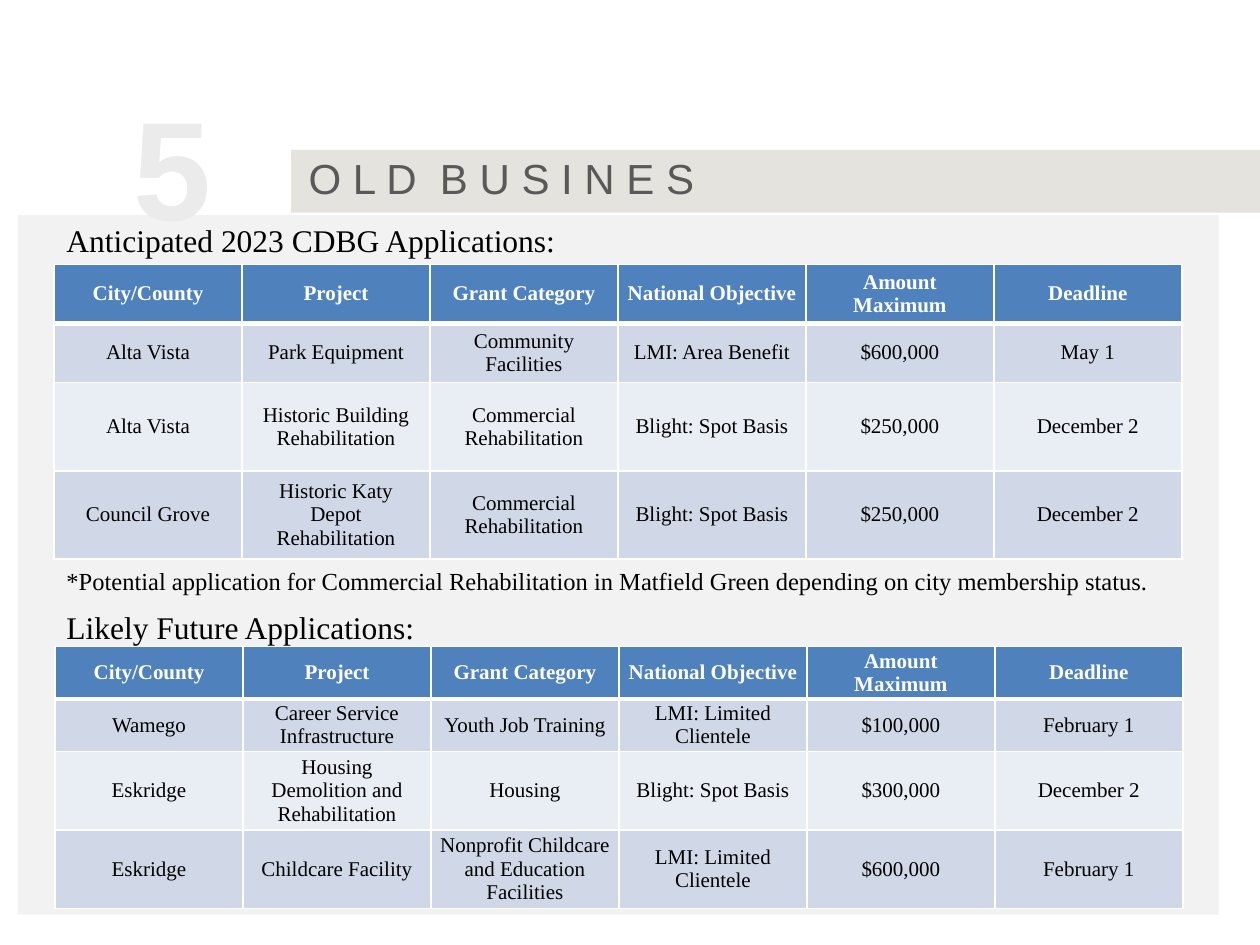
from lxml import etree
from pptx import Presentation
from pptx.dml.color import RGBColor
from pptx.enum.shapes import MSO_SHAPE
from pptx.enum.text import MSO_ANCHOR, PP_ALIGN
from pptx.oxml.ns import qn
from pptx.util import Cm, Pt

RECT = MSO_SHAPE.RECTANGLE
TOP, MID, LOW = MSO_ANCHOR.TOP, MSO_ANCHOR.MIDDLE, MSO_ANCHOR.BOTTOM
LEFT, MIDST = PP_ALIGN.LEFT, PP_ALIGN.CENTER


class Theme:
    sans, serif = "Arial", "Times New Roman"
    band, panel = "E5E3DD", "F2F2F2"
    pale, grey, black, white = "EBEBEB", "595959", "000000", "FFFFFF"
    head, odd, even = "4F81BD", "D0D8E8", "E9EDF4"
    huge, title, sub, note, body = 80, 24, 18, 14, 12
    thin, thick = 1, 3


def write(frame, text, size=Theme.body, font=Theme.serif, color=Theme.black,
          bold=False, align=LEFT, anchor=TOP, pad=(0.25, 0.13, 0.25, 0.13)):
    frame.word_wrap = True
    frame.vertical_anchor = anchor
    (frame.margin_left, frame.margin_top,
     frame.margin_right, frame.margin_bottom) = [Cm(v) for v in pad]
    para = frame.paragraphs[0]
    para.alignment = align
    run = para.add_run()
    run.text = text
    run.font.size = Pt(size)
    run.font.name = font
    run.font.bold = bold
    run.font.color.rgb = RGBColor.from_string(color)


def edge(cell, top, base):
    props = cell._tc.get_or_add_tcPr()
    sides = {"lnL": Theme.thin, "lnR": Theme.thin, "lnT": top, "lnB": base}
    for spot, (side, width) in enumerate(sides.items()):
        line = etree.Element(qn("a:" + side), w=str(Pt(width)))
        fill = etree.SubElement(line, qn("a:solidFill"))
        etree.SubElement(fill, qn("a:srgbClr"), val=Theme.white)
        props.insert(spot, line)


deck = Presentation()
deck.slide_width, deck.slide_height = Cm(25.4), Cm(19.05)
slide = deck.slides.add_slide(deck.slide_layouts[6])
shapes = slide.shapes

for color, box in [
    (Theme.band, (5.87, 3.02, 19.53, 1.27)),
    (Theme.panel, (0.36, 4.34, 24.21, 14.1)),
]:
    block = shapes.add_shape(RECT, *[Cm(v) for v in box])
    block.shadow.inherit = False
    block.fill.solid()
    block.fill.fore_color.rgb = RGBColor.from_string(color)
    block.line.fill.background()

sub = dict(size=Theme.sub)
for text, box, style in [
    ("5", (1.96, 1.27, 3.84, 2.36),
     dict(size=Theme.huge, font=Theme.sans, color=Theme.pale, bold=True,
          align=MIDST, pad=(0.1, 0.36, 0.9, 0.1))),
    ("O L D  B U S I N E S", (6.12, 2.92, 16.1, 1.27),
     dict(size=Theme.title, font=Theme.sans, color=Theme.grey,
          anchor=LOW, pad=(0.1, 0.1, 0.1, 0.1))),
    ("Anticipated 2023 CDBG Applications:", (1.09, 4.32, 10.67, 1.63), sub),
    ("Likely Future Applications:", (1.09, 12.12, 10.67, 1.02), sub),
    ("*Potential application for Commercial Rehabilitation in Matfield Green "
     "depending on city membership status.", (1.09, 11.28, 22.61, 0.86),
     dict(size=Theme.note)),
]:
    label = shapes.add_textbox(*[Cm(v) for v in box])
    write(label.text_frame, text, **style)

heads = ["City/County", "Project", "Grant Category", "National Objective",
         "Amount Maximum", "Deadline"]
soon = [
    ["Alta Vista", "Park Equipment", "Community Facilities",
     "LMI: Area Benefit", "$600,000", "May 1"],
    ["Alta Vista", "Historic Building Rehabilitation",
     "Commercial Rehabilitation", "Blight: Spot Basis", "$250,000",
     "December 2"],
    ["Council Grove", "Historic Katy Depot Rehabilitation",
     "Commercial Rehabilitation", "Blight: Spot Basis", "$250,000",
     "December 2"],
]
later = [
    ["Wamego", "Career Service Infrastructure", "Youth Job Training",
     "LMI: Limited Clientele", "$100,000", "February 1"],
    ["Eskridge", "Housing Demolition and Rehabilitation", "Housing",
     "Blight: Spot Basis", "$300,000", "December 2"],
    ["Eskridge", "Childcare Facility",
     "Nonprofit Childcare and Education Facilities",
     "LMI: Limited Clientele", "$600,000", "February 1"],
]

for rows, left, top, highs in [
    (soon, 1.09, 5.33, [1.19, 1.19, 1.78, 1.78]),
    (later, 1.11, 13.03, [1.06, 1.06, 1.58, 1.58]),
]:
    data = [heads] + rows
    grid = shapes.add_table(len(data), len(heads), Cm(left), Cm(top),
                            Cm(22.74), Cm(sum(highs))).table
    for col in grid.columns:
        col.width = Cm(22.74 / len(heads))
    for r, (row, high) in enumerate(zip(data, highs)):
        grid.rows[r].height = Cm(high)
        first = r == 0
        shade = Theme.head if first else Theme.odd if r % 2 else Theme.even
        for c, text in enumerate(row):
            cell = grid.cell(r, c)
            cell.fill.solid()
            cell.fill.fore_color.rgb = RGBColor.from_string(shade)
            write(cell.text_frame, text, bold=first, align=MIDST,
                  color=Theme.white if first else Theme.black)
            cell.vertical_anchor = MID
            cell.margin_left = cell.margin_right = Cm(0.18)
            cell.margin_top = cell.margin_bottom = 0
            edge(cell, Theme.thick if r == 1 else Theme.thin,
                 Theme.thick if first else Theme.thin)

deck.save("out.pptx")
